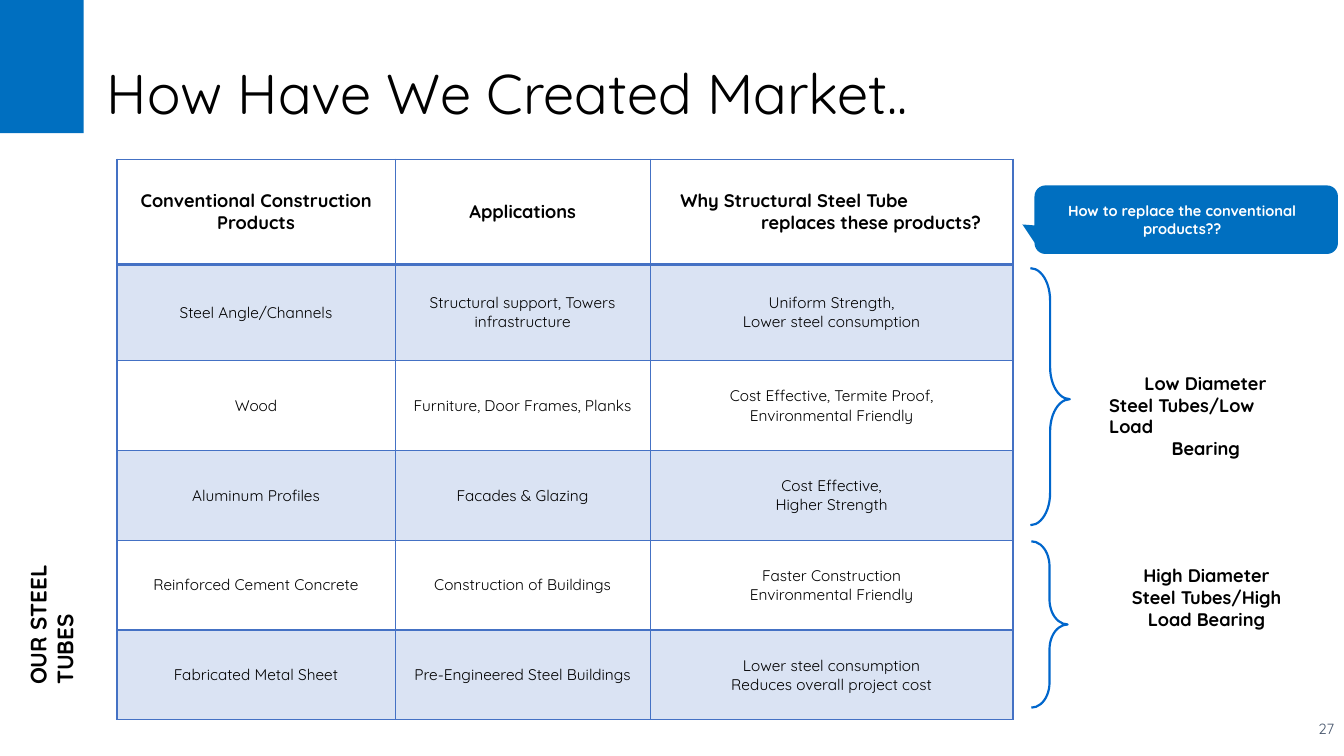
from lxml import etree
from pptx import Presentation
from pptx import util as u
from pptx.dml.color import RGBColor
from pptx.enum import shapes, text
from pptx.oxml import ns

WIDTH, HEIGHT = u.Inches(13.33), u.Inches(7.5)
FONT = "Quicksand"
BLACK = RGBColor(0x00, 0x00, 0x00)
WHITE = RGBColor(0xFF, 0xFF, 0xFF)
BLUE = RGBColor(0x00, 0x6F, 0xC0)
BRACE_BLUE = RGBColor(0x00, 0x66, 0xCC)
GRID_BLUE = RGBColor(0x44, 0x71, 0xC4)
BAND = RGBColor(0xDA, 0xE3, 0xF3)
SLATE = RGBColor(0x44, 0x53, 0x6A)

COLUMN_SHARES = (20.7, 18.98, 27)
ROW_SHARES = (13.87, 12.8) + (11.87,) * 4
PRODUCTS = [
    ("Conventional Construction\vProducts", "Applications",
     "Why Structural Steel Tube\vreplaces these products?"),
    ("Steel Angle/Channels", "Structural support, Towers\vinfrastructure",
     "Uniform Strength,\vLower steel consumption"),
    ("Wood", "Furniture, Door Frames, Planks",
     "Cost Effective, Termite Proof,\vEnvironmental Friendly"),
    ("Aluminum Profiles", "Facades & Glazing",
     "Cost Effective,\vHigher Strength"),
    ("Reinforced Cement Concrete", "Construction of Buildings",
     "Faster Construction\vEnvironmental Friendly"),
    ("Fabricated Metal Sheet", "Pre-Engineered Steel Buildings",
     "Lower steel consumption\vReduces overall project cost"),
]


def across(share):
    return round(WIDTH * share / 100)


def down(share):
    return round(HEIGHT * share / 100)


def area(x, y, w, h):
    return across(x), down(y), across(w), down(h)


def style(paragraph, size, color=BLACK, bold=False, align=text.PP_ALIGN.LEFT):
    paragraph.alignment = align
    font = paragraph.font
    font.name, font.size, font.bold = FONT, u.Pt(size), bold
    font.color.rgb = color


def indent(paragraph, left, first):
    properties = paragraph._p.get_or_add_pPr()
    properties.set("marL", str(u.Inches(left)))
    properties.set("indent", str(u.Inches(first)))


def clear_margins(frame):
    frame.margin_left = frame.margin_top = 0
    frame.margin_right = frame.margin_bottom = 0
    frame.word_wrap = True


def add_label(slide, place, lines, size, **look):
    frame = slide.shapes.add_textbox(*area(*place)).text_frame
    clear_margins(frame)
    frame.text = lines
    for paragraph in frame.paragraphs:
        style(paragraph, size, **look)
    return frame


def add_block(slide, preset, place):
    block = slide.shapes.add_shape(preset, *area(*place))
    block.shadow.inherit = False
    block.fill.solid()
    block.fill.fore_color.rgb = BLUE
    block.line.fill.background()
    return block


def add_brace(slide, place, curve, tip):
    brace = slide.shapes.add_shape(shapes.MSO_SHAPE.RIGHT_BRACE, *area(*place))
    brace.shadow.inherit = False
    brace.fill.background()
    brace.line.color.rgb = BRACE_BLUE
    brace.line.width = u.Pt(1.56)
    brace.adjustments[0], brace.adjustments[1] = curve, tip


def add_border(cell, side, points):
    line = etree.SubElement(cell._tc.get_or_add_tcPr(), ns.qn(f"a:ln{side}"),
                            w=str(u.Pt(points)))
    fill = etree.SubElement(line, ns.qn("a:solidFill"))
    etree.SubElement(fill, ns.qn("a:srgbClr"), val=str(GRID_BLUE))


def fill_cell(cell, words, row):
    cell.margin_left = cell.margin_right = 0
    cell.margin_top = cell.margin_bottom = 0
    cell.vertical_anchor = text.MSO_ANCHOR.MIDDLE
    cell.text = words
    header = row == 0
    style(cell.text_frame.paragraphs[0], 13 if header else 11, bold=header,
          align=text.PP_ALIGN.CENTER)
    heavy = {(0, "B"), (1, "T")}
    for side in "LRTB":
        add_border(cell, side, 2.25 if (row, side) in heavy else 1)
    if row % 2:
        cell.fill.solid()
        cell.fill.fore_color.rgb = BAND
    else:
        cell.fill.background()


def add_products(slide):
    place = area(8.7, 21.07, sum(COLUMN_SHARES), sum(ROW_SHARES))
    table = slide.shapes.add_table(len(PRODUCTS), len(COLUMN_SHARES), *place).table
    table.first_row = table.horz_banding = False
    for column, share in zip(table.columns, COLUMN_SHARES):
        column.width = across(share)
    for row, share in zip(table.rows, ROW_SHARES):
        row.height = down(share)
    for r, product in enumerate(PRODUCTS):
        for c, words in enumerate(product):
            fill_cell(table.cell(r, c), words, r)
    reason = table.cell(0, 2).text_frame.paragraphs[0]
    reason.alignment = text.PP_ALIGN.LEFT
    indent(reason, 1.1, -0.8)


def add_title(slide):
    title = slide.shapes.title
    title.left, title.top, title.width, title.height = area(7.35, 6.67, 89.8, 12)
    frame = title.text_frame
    clear_margins(frame)
    frame.margin_left = frame.margin_top = u.Inches(0.08)
    frame.auto_size = text.MSO_AUTO_SIZE.NONE
    frame.vertical_anchor = text.MSO_ANCHOR.TOP
    frame.text = "How Have We Created Market.."
    style(frame.paragraphs[0], 40)


def add_question(slide):
    callout = add_block(slide, shapes.MSO_SHAPE.ROUNDED_RECTANGULAR_CALLOUT,
                        (76.97, 24.53, 22.58, 9.07))
    for position, value in enumerate((-0.54, 0.07, 0.16)):
        callout.adjustments[position] = value
    frame = callout.text_frame
    clear_margins(frame)
    frame.margin_right = u.Inches(0.08)
    frame.vertical_anchor = text.MSO_ANCHOR.MIDDLE
    frame.text = "How to replace the conventional\vproducts??"
    style(frame.paragraphs[0], 10.5, WHITE, True, text.PP_ALIGN.CENTER)


def main():
    deck = Presentation()
    deck.slide_width, deck.slide_height = WIDTH, HEIGHT
    slide = deck.slides.add_slide(deck.slide_layouts[5])

    add_block(slide, shapes.MSO_SHAPE.RECTANGLE, (0, 0, 6.23, 17.6))
    add_title(slide)
    company = add_label(slide, (1.8, 61.6, 4.5, 29), "OUR STEEL\vTUBES", 16, bold=True)
    company._txBody.bodyPr.set("vert", "vert270")
    add_products(slide)
    add_question(slide)

    add_brace(slide, (76.67, 35.47, 2.93, 34), 0.82, 0.51)
    add_brace(slide, (76.74, 71.6, 2.7, 22), 0.69, 0.5)
    low_load = add_label(slide, (82.45, 49.2, 14.63, 12.2),
                         "Low Diameter\vSteel Tubes/Low\vLoad\nBearing", 13, bold=True)
    indent(low_load.paragraphs[0], 0.01, 0.35)
    indent(low_load.paragraphs[1], 0.63, 0)
    add_label(slide, (84.1, 74.67, 11.33, 9.33),
              "High Diameter\vSteel Tubes/High\vLoad Bearing", 13, bold=True,
              align=text.PP_ALIGN.CENTER)
    add_label(slide, (97.67, 95.2, 2.03, 2.8), "27", 10.5, color=SLATE,
              align=text.PP_ALIGN.CENTER)
    deck.save("out.pptx")


if __name__ == "__main__":
    main()
